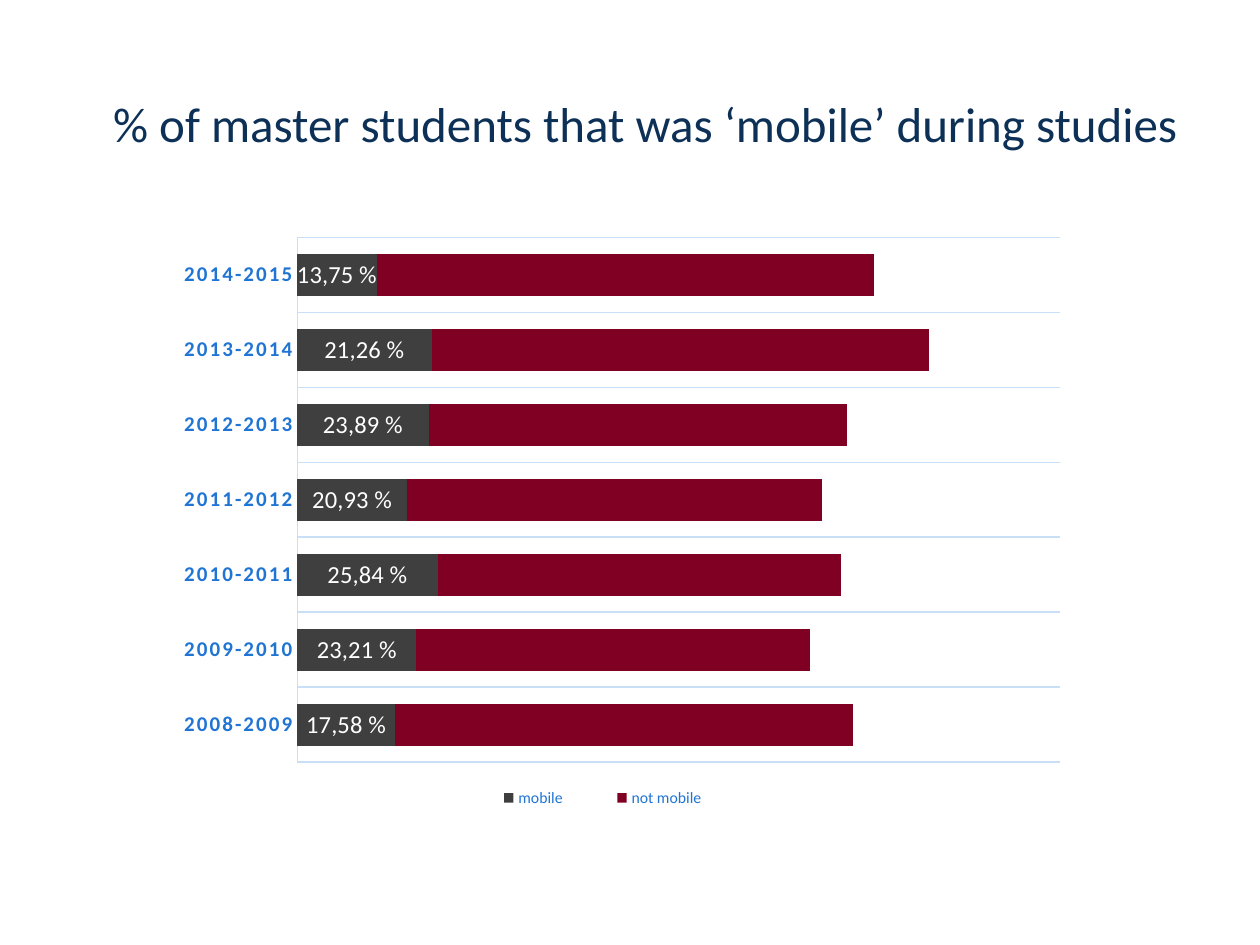
from lxml import etree
from pptx import Presentation
from pptx import util as u
from pptx.chart.data import CategoryChartData
from pptx.dml.color import RGBColor
from pptx.enum import chart as c
from pptx.oxml.ns import qn

FONT = "Calibri"
NAVY, BLUE, PALE_BLUE = "0D3057", "2075D4", "C9DFF7"


def style_font(font, size, color, bold=False):
    font.name = FONT
    font.size = u.Pt(size)
    font.bold = bold
    font.color.rgb = RGBColor.from_string(color)


def set_layout(parent, anchor, values, inner=False):
    """Place a chart part by fractions of the chart's width and height."""
    for old_layout in parent.findall(qn("c:layout")):
        parent.remove(old_layout)
    layout = etree.Element(qn("c:layout"))
    manual = etree.SubElement(layout, qn("c:manualLayout"))
    settings = [("xMode", "edge"), ("yMode", "edge"), *zip("xywh", values)]
    if inner:
        settings.insert(0, ("layoutTarget", "inner"))
    for tag, value in settings:
        etree.SubElement(manual, qn(f"c:{tag}")).set("val", str(value))
    if anchor is None:
        parent.insert(0, layout)
    else:
        anchor.addnext(layout)


presentation = Presentation()
presentation.slide_width = u.Inches(10)
presentation.slide_height = u.Inches(7.5)
slide = presentation.slides.add_slide(presentation.slide_layouts[6])

# Title
title = slide.shapes.add_textbox(u.Inches(0.8), u.Inches(0.69), u.Inches(8.73), u.Inches(0.57))
title.text_frame.word_wrap = False
paragraph = title.text_frame.paragraphs[0]
paragraph.text = "% of master students that was ‘mobile’ during studies"
style_font(paragraph.font, 28, NAVY)

# Chart data
mobile_shares = ["17,58 %", "23,21 %", "25,84 %", "20,93 %", "23,89 %", "21,26 %", "13,75 %"]
data = CategoryChartData()
data.categories = [f"{year}-{year + 1}" for year in range(2008, 2015)]
data.add_series("mobile", [32, 39, 46, 36, 43, 44, 26])
data.add_series("not mobile", [150, 129, 132, 136, 137, 163, 163])

# Stacked bars
chart = slide.shapes.add_chart(
    c.XL_CHART_TYPE.BAR_STACKED,
    u.Inches(1.26), u.Inches(1.51), u.Inches(7.34), u.Inches(5.05), data,
).chart
chart.has_title = False
style_font(chart.font, 10, NAVY)
plot = chart.plots[0]
plot.gap_width = 79
plot.overlap = 100
plot.vary_by_categories = False
set_layout(chart._chartSpace.chart.plotArea, None, [0.15, 0.074, 0.825, 0.825], inner=True)
for series, color in zip(plot.series, ["3F3F3F", "800023"]):
    series.format.fill.solid()
    series.format.fill.fore_color.rgb = RGBColor.from_string(color)

# Share of mobile students on each bar
mobile = plot.series[0]
labels = mobile.data_labels
labels.show_value = True
labels.position = c.XL_LABEL_POSITION.CENTER
style_font(labels.font, 14, "FFFFFF")
for index, share in enumerate(mobile_shares):
    label = mobile.points[index].data_label
    label.position = c.XL_LABEL_POSITION.CENTER
    run = label.text_frame.paragraphs[0].add_run()
    run.text = share
    style_font(run.font, 14, "FFFFFF")

# Axes
years = chart.category_axis
years.major_tick_mark = c.XL_TICK_MARK.NONE
years.has_major_gridlines = True
for line in (years.format.line, years.major_gridlines.format.line):
    line.color.rgb = RGBColor.from_string(PALE_BLUE)
    line.width = u.Pt(0.75)
style_font(years.tick_labels.font, 12, BLUE, bold=True)
years._element.find(".//" + qn("a:defRPr")).set("spc", "120")
chart.value_axis.minimum_scale = 0
chart.value_axis.maximum_scale = 250
chart.value_axis.has_major_gridlines = False
chart.value_axis.visible = False

# Legend below the bars
chart.has_legend = True
legend = chart.legend
legend.position = c.XL_LEGEND_POSITION.TOP
legend.include_in_layout = False
style_font(legend.font, 9, BLUE)
set_layout(legend._element, legend._element.find(qn("c:legendPos")), [0.32, 0.93, 0.32, 0.05])

presentation.save("out.pptx")
